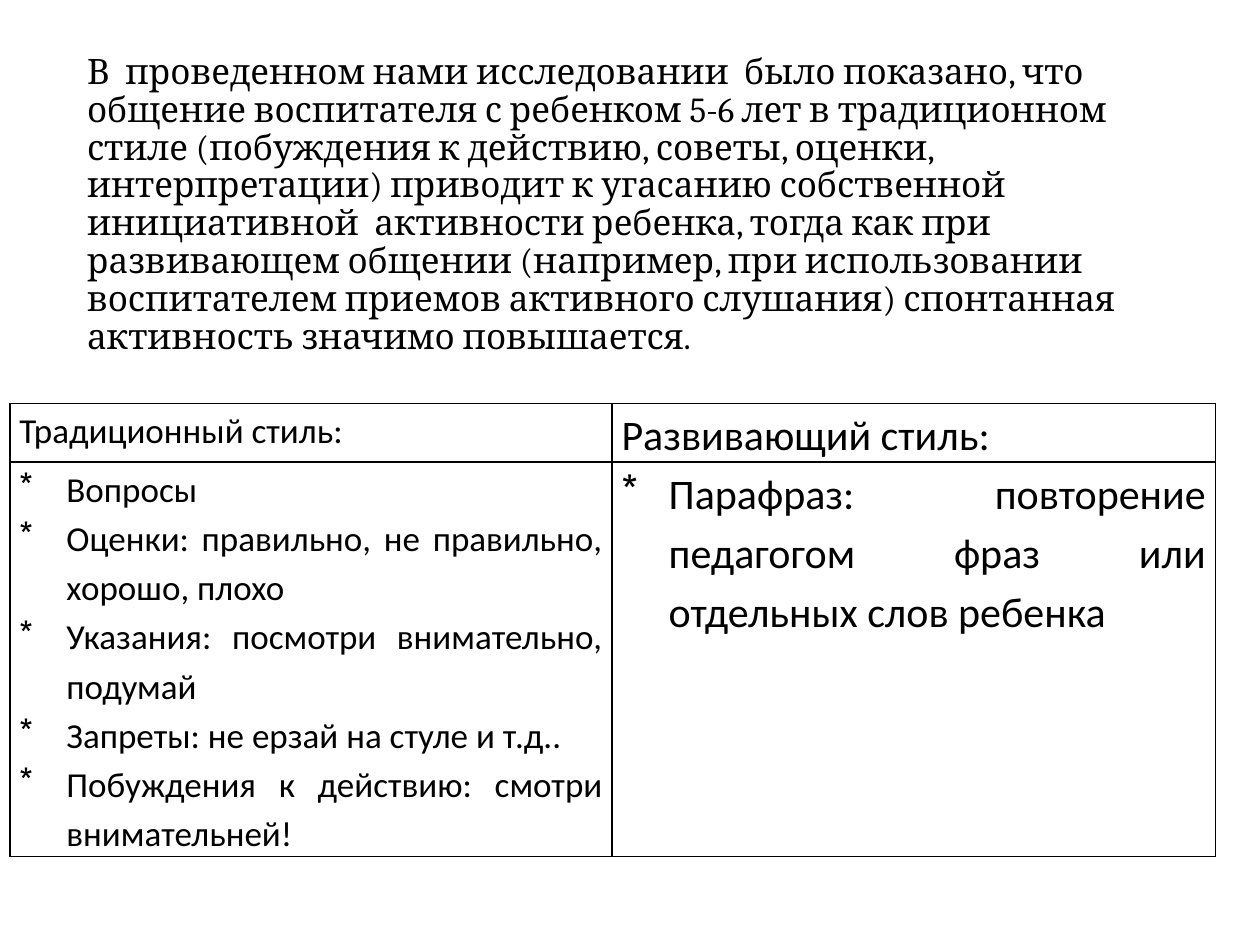
import dataclasses

import lxml.etree
import pptx
import pptx.dml.color
import pptx.enum.text
import pptx.oxml.ns
import pptx.util

Cm, Pt = pptx.util.Cm, pptx.util.Pt
qn = pptx.oxml.ns.qn
PP_ALIGN = pptx.enum.text.PP_ALIGN

INTRO = (
    "В  проведенном нами исследовании  было показано, что общение воспитателя "
    "с ребенком 5-6 лет в традиционном стиле (побуждения к действию, советы, "
    "оценки, интерпретации) приводит к угасанию собственной инициативной  "
    "активности ребенка, тогда как при развивающем общении (например, при "
    "использовании воспитателем приемов активного слушания) спонтанная "
    "активность значимо повышается."
)
TRADITIONAL = [
    "Вопросы",
    "Оценки: правильно, не правильно, хорошо, плохо",
    "Указания: посмотри внимательно, подумай",
    "Запреты: не ерзай на стуле и т.д..",
    "Побуждения к действию: смотри внимательней!",
]
DEVELOPING = ["Парафраз: повторение педагогом фраз или отдельных слов ребенка"]


@dataclasses.dataclass
class Theme:
    ink: pptx.dml.color.RGBColor = pptx.dml.color.RGBColor(0, 0, 0)
    title_font: str = "Cambria"
    body_font: str = "Calibri"
    title_size: int = Pt(20)
    column_sizes: tuple = (Pt(20), Pt(24))
    border: int = Pt(1)
    indent: int = Cm(0.95)


class SlideBuilder:
    def __init__(self, slide, theme):
        self.slide = slide
        self.theme = theme

    def add_run(self, p, text, font, size):
        r = p.add_run()
        r.text = text
        r.font.name = font
        r.font.size = size
        r.font.color.rgb = self.theme.ink

    def title(self, text, left, top, width, height):
        sp = self.slide.shapes.title
        sp.left, sp.top, sp.width, sp.height = left, top, width, height
        tf = sp.text_frame
        tf.word_wrap = True
        tf.auto_size = pptx.enum.text.MSO_AUTO_SIZE.NONE
        tf.vertical_anchor = pptx.enum.text.MSO_ANCHOR.BOTTOM
        tf.margin_bottom = Cm(1.55)
        p = tf.paragraphs[0]
        p.alignment = PP_ALIGN.LEFT
        p.line_spacing = 0.9
        self.add_run(p, text, self.theme.title_font, self.theme.title_size)

    def table(self, columns, left, top, widths, heights):
        """Each column is a heading and a list of bulleted items."""
        frame = self.slide.shapes.add_table(
            len(heights), len(columns), left, top, sum(widths), sum(heights))
        table = frame.table
        table.first_row = table.horz_banding = False
        for row, height in zip(table.rows, heights):
            row.height = height
        for i, (heading, items) in enumerate(columns):
            table.columns[i].width = widths[i]
            size = self.theme.column_sizes[i]
            self.cell(table.cell(0, i), [heading], size)
            self.cell(table.cell(1, i), items, size, bulleted=True)

    def cell(self, cell, texts, size, bulleted=False):
        cell.margin_left = cell.margin_right = Cm(0.19)
        cell.margin_top = cell.margin_bottom = 0
        self.borders(cell)
        cell.fill.background()
        tf = cell.text_frame
        for i, text in enumerate(texts):
            p = tf.add_paragraph() if i else tf.paragraphs[0]
            p.line_spacing = 1.15
            if bulleted:
                p.alignment = PP_ALIGN.JUSTIFY
                self.bullet(p)
            else:
                p.space_after = Pt(10)
            self.add_run(p, text, self.theme.body_font, size)

    def bullet(self, p):
        pPr = p._p.get_or_add_pPr()
        pPr.set("marL", str(self.theme.indent))
        pPr.set("indent", str(-self.theme.indent))
        lxml.etree.SubElement(pPr, qn("a:buChar")).set("char", "*")

    def borders(self, cell):
        tcPr = cell._tc.get_or_add_tcPr()
        for side in ("lnL", "lnR", "lnT", "lnB"):
            ln = lxml.etree.SubElement(tcPr, qn("a:" + side))
            ln.set("w", str(self.theme.border))
            fill = lxml.etree.SubElement(ln, qn("a:solidFill"))
            color = lxml.etree.SubElement(fill, qn("a:srgbClr"))
            color.set("val", str(self.theme.ink))


def main():
    prs = pptx.Presentation()
    prs.slide_width, prs.slide_height = Cm(25.4), Cm(19.05)
    s = prs.slides.add_slide(prs.slide_layouts[5])
    builder = SlideBuilder(s, Theme())
    builder.title(INTRO, Cm(1.5), Cm(0), Cm(23.01), Cm(8.74))
    builder.table(
        [("Традиционный стиль:", TRADITIONAL), ("Развивающий стиль:", DEVELOPING)],
        Cm(0.2), Cm(8.13), [Cm(12.14), Cm(12.16)], [Cm(0.81), Cm(7.32)])
    prs.save("out.pptx")


if __name__ == "__main__":
    main()
